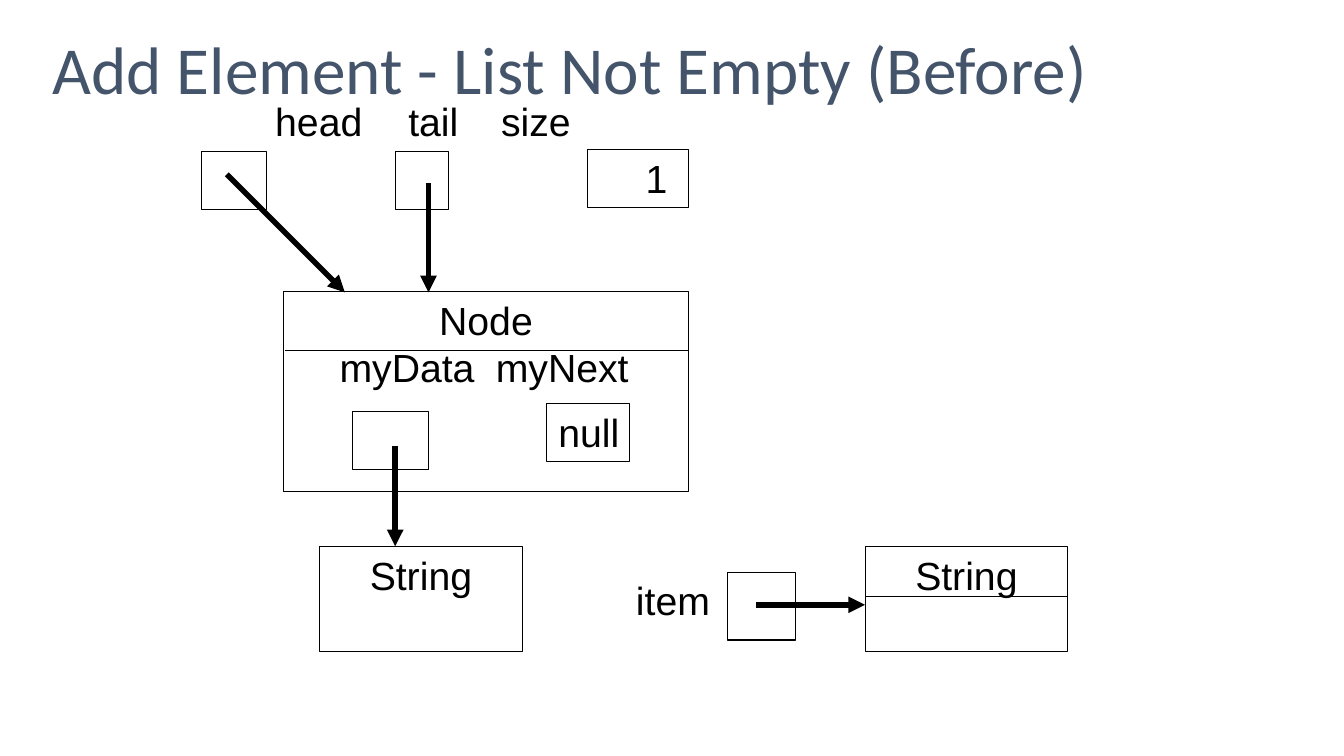
from lxml.etree import SubElement
from pptx import Presentation
from pptx.dml.color import RGBColor
from pptx.enum.shapes import MSO_CONNECTOR as Connector, MSO_SHAPE as Shape
from pptx.enum.text import MSO_ANCHOR as Anchor, PP_ALIGN as Align
from pptx.oxml.ns import qn
from pptx.util import Emu, Pt

PX = 9144
INK = "000000"
BODY = {"name": "Arial", "size": Pt(28)}
HEADING = {"name": "Calibri", "size": Pt(48)}

TITLE = ("Add Element - List Not Empty (Before)", (42, 0, 1250, 145))
BOXES = [
    {"at": (200, 150, 64, 58)},
    {"at": (392, 150, 53, 58)},
    {"at": (583, 148, 100, 58), "lines": ["1"], "align": Align.RIGHT, "right": 21},
    {"at": (317, 542, 201, 104), "lines": ["String"]},
    {"at": (281, 289, 402, 199), "lines": ["Node", "\tmyData\tmyNext"], "tabs": (46, 201)},
    {"at": (542, 400, 82, 58), "lines": ["null"], "align": Align.RIGHT, "wrap": False},
    {"at": (350, 408, 75, 58)},
    {"at": (858, 542, 201, 104), "lines": ["String"]},
    {"at": (722, 568, 67, 67)},
]
LABELS = [
    {"at": (266, 92, 393, 57), "lines": ["head\ttail\tsize"], "tabs": (132, 224), "left": 7},
    {"at": (620, 567, 94, 57), "lines": ["item"], "align": Align.RIGHT, "wrap": False},
]
DIVIDERS = [(283, 348, 683, 348), (858, 592, 1058, 592)]
ARROWS = [
    (225, 173, 342, 290),
    (425, 182, 425, 290),
    (392, 442, 392, 542),
    (750, 600, 858, 600),
]


def px(value):
    return Emu(value * PX)


def color(value):
    return RGBColor.from_string(value)


def write(box, lines, align=Align.CENTER, wrap=True, left=10, right=10,
          tabs=(), font=BODY, ink=INK, anchor=Anchor.TOP):
    frame = box.text_frame
    settings = {"word_wrap": wrap, "vertical_anchor": anchor, "margin_left": px(left),
                "margin_right": px(right), "margin_top": px(5), "margin_bottom": px(5)}
    for name, value in settings.items():
        setattr(frame, name, value)
    for index, line in enumerate(lines):
        para = frame.add_paragraph() if index else frame.paragraphs[0]
        para.alignment = Align.LEFT if "\t" in line else align
        span = para.add_run()
        span.text = line
        for name, value in font.items():
            setattr(span.font, name, value)
        span.font.color.rgb = color(ink)
        if "\t" in line:
            stops = SubElement(para._p.get_or_add_pPr(), qn("a:tabLst"))
            for tab in tabs:
                SubElement(stops, qn("a:tab"), pos=str(px(tab)), algn="l")


def add_box(page, at, lines=(), **options):
    box = page.shapes.add_shape(Shape.RECTANGLE, *map(px, at))
    box.shadow.inherit = False
    box.fill.background()
    box.line.color.rgb = color(INK)
    box.line.width = Pt(0.75)
    write(box, lines, **options)


def add_label(page, at, lines, **options):
    label = page.shapes.add_textbox(*map(px, at))
    write(label, lines, **options)
    return label


def add_line(page, ends, width, arrow=False):
    line = page.shapes.add_connector(Connector.STRAIGHT, *map(px, ends))
    line.line.color.rgb = color(INK)
    line.line.width = Pt(width)
    if arrow:
        SubElement(line.line._get_or_add_ln(), qn("a:tailEnd"), type="triangle")
    SubElement(line._element.spPr, qn("a:effectLst"))


def main():
    deck = Presentation()
    deck.slide_width, deck.slide_height = px(1333), px(750)
    page = deck.slides.add_slide(deck.slide_layouts[6])
    text, at = TITLE
    title = add_label(page, at, [text], align=Align.LEFT, font=HEADING,
                      ink="44546A", anchor=Anchor.MIDDLE)
    title.text_frame.paragraphs[0].line_spacing = 0.9
    for box in BOXES:
        add_box(page, **box)
    for label in LABELS:
        add_label(page, **label)
    for ends in DIVIDERS:
        add_line(page, ends, 0.75)
    for ends in ARROWS:
        add_line(page, ends, 4, arrow=True)
    deck.save("out.pptx")


if __name__ == "__main__":
    main()
